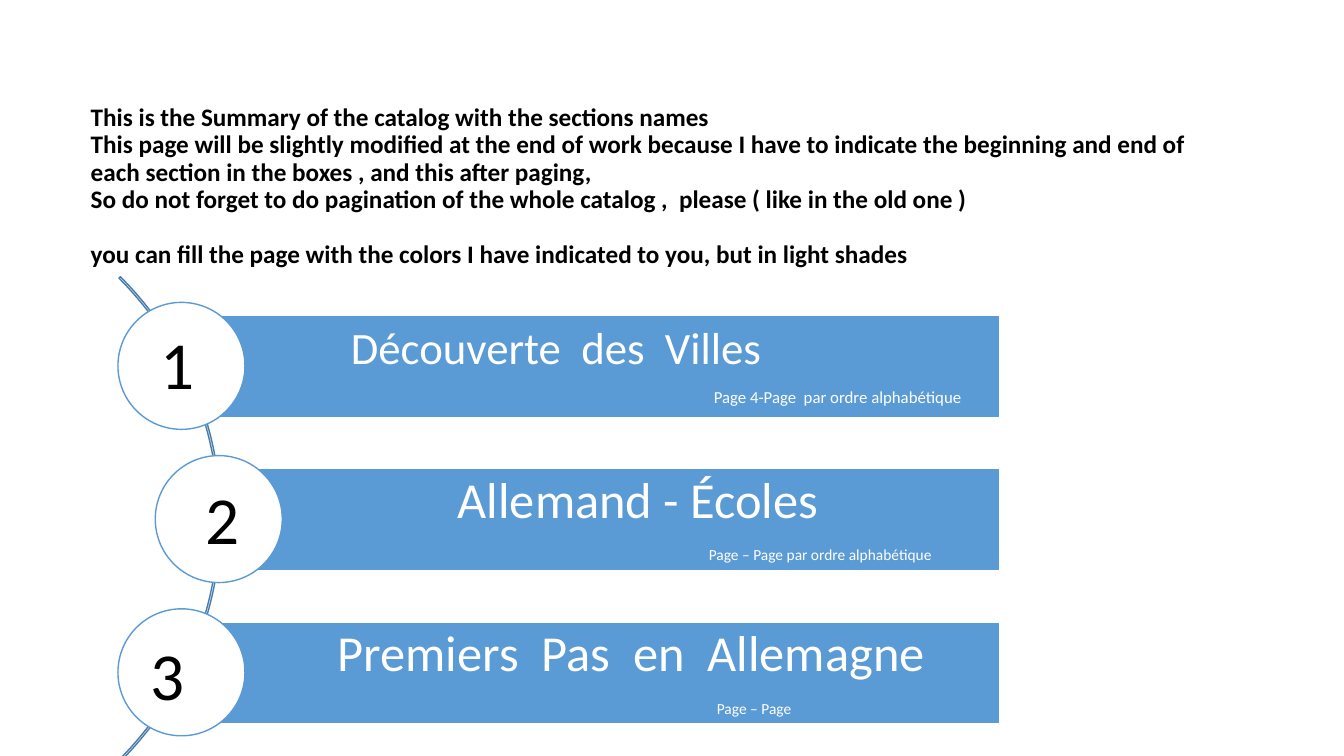
from dataclasses import dataclass

from pptx import Presentation
from pptx.dml.color import RGBColor
from pptx.enum.shapes import MSO_SHAPE
from pptx.enum.text import MSO_ANCHOR, MSO_AUTO_SIZE, PP_ALIGN
from pptx.util import Inches, Pt

ARC, RECT, OVAL = MSO_SHAPE.BLOCK_ARC, MSO_SHAPE.RECTANGLE, MSO_SHAPE.OVAL
MIDDLE, TOP = MSO_ANCHOR.MIDDLE, MSO_ANCHOR.TOP
LEFT, FIXED = PP_ALIGN.LEFT, MSO_AUTO_SIZE.NONE


@dataclass(frozen=True)
class Theme:
    """Colours and type sizes of the summary page."""
    face: str = "Calibri"
    ink: str = "000000"
    paper: str = "FFFFFF"
    blue: str = "5B9BD5"
    curve: str = "497CAB"
    head: int = 18
    digit: int = 48


class Page:
    """Draws the parts of one slide in a given theme."""

    def __init__(self, slide, theme):
        """Keep the slide and its theme."""
        self.slide, self.theme = slide, theme

    def style(self, para, size, color, bold=False):
        """Set the font and alignment of a paragraph."""
        para.alignment = LEFT
        font = para.font
        font.name, font.size, font.bold = self.theme.face, Pt(size), bold
        font.color.rgb = RGBColor.from_string(color)

    def title(self, lines, left, top, width, height):
        """Place the title and fill it with paragraphs."""
        shape = self.slide.shapes.title
        shape.left, shape.top = Inches(left), Inches(top)
        shape.width, shape.height = Inches(width), Inches(height)
        frame = shape.text_frame
        frame.word_wrap, frame.auto_size = True, FIXED
        frame.vertical_anchor = MIDDLE
        frame.text = "\n".join(lines)
        for para in frame.paragraphs:
            self.style(para, self.theme.head, self.theme.ink, True)
            para.line_spacing, para.space_before = 0.9, Pt(0)
        frame.paragraphs[-1].space_before = Pt(20)

    def shape(self, kind, left, top, width, height, line, fill=None):
        """Add a preset shape with a thin outline."""
        shape = self.slide.shapes.add_shape(
            kind, Inches(left), Inches(top), Inches(width), Inches(height))
        shape.shadow.inherit = False
        if fill:
            shape.fill.solid()
            shape.fill.fore_color.rgb = RGBColor.from_string(fill)
        else:
            shape.fill.background()
        shape.line.color.rgb = RGBColor.from_string(line)
        shape.line.width = Pt(1)
        return shape

    def arc(self, left, top, size):
        """Add the thin curve that links the circles."""
        arc = self.shape(ARC, left, top, size, size, self.theme.curve)
        for i, value in enumerate((189, 27, 0.003)):
            arc.adjustments[i] = value

    def bar(self, left, top, right, height, lines):
        """Add a blue bar whose lines start at given places."""
        theme, inset = self.theme, 0.8
        bar = self.shape(RECT, left, top, right - left, height,
                         theme.paper, theme.blue)
        frame = bar.text_frame
        frame.word_wrap, frame.vertical_anchor = True, MIDDLE
        frame.margin_left = Inches(inset)
        frame.margin_top = frame.margin_right = frame.margin_bottom = Inches(0.08)
        frame.text = "\n".join(text for text, size, start in lines)
        for para, (text, size, start) in zip(frame.paragraphs, lines):
            self.style(para, size, theme.paper)
            para.line_spacing, para.space_after = 0.9, Pt(round(size * 0.35))
            indent = Inches(start - left - inset)
            props = para._p.get_or_add_pPr()
            props.set("marL", str(indent))
            props.set("indent", "0")

    def circle(self, left, top, size):
        """Add a white circle with a blue rim."""
        self.shape(OVAL, left, top, size, size, self.theme.blue, self.theme.paper)

    def digit(self, text, left, top):
        """Add a large section number."""
        box = self.slide.shapes.add_textbox(
            Inches(left), Inches(top), Inches(0.72), Inches(0.91))
        frame = box.text_frame
        frame.word_wrap, frame.vertical_anchor = True, TOP
        frame.text = text
        self.style(frame.paragraphs[0], self.theme.digit, self.theme.ink)


HEAD = (
    "This is the Summary of the catalog with the sections names",
    "This page will be slightly modified at the end of work because I have to "
    "indicate the beginning and end of each section in the boxes , and this "
    "after paging,",
    "So do not forget to do pagination of the whole catalog ,  please "
    "( like in the old one )",
    "you can fill the page with the colors I have indicated to you, "
    "but in light shades",
)
PARTS = (
    (1.8, 1.49, (("Découverte  des  Villes", 32, 3.48),
                 ("Page 4-Page  par ordre alphabétique", 12, 7.08))),
    (2.17, 1.94, (("Allemand - Écoles", 36, 4.54),
                  ("Page – Page par ordre alphabétique", 11, 7.03))),
    (1.8, 1.39, (("Premiers  Pas  en  Allemagne", 36, 3.35),
                 ("Page – Page", 11, 7.11))),
)


def main():
    """Build the summary slide and save it."""
    deck = Presentation()
    deck.slide_width, deck.slide_height = Inches(13.33), Inches(7.5)
    page = Page(deck.slides.add_slide(deck.slide_layouts[5]), Theme())
    page.title(HEAD, 0.8, 1.13, 11.5, 1.45)
    page.arc(-4.61, 1.75, 6.8)
    for i, (left, start, lines) in enumerate(PARTS):
        drop = 1.52 * i
        page.bar(left, 3.13 + drop, 9.92, 1.01, lines)
        page.circle(left - 0.63, 3 + drop, 1.26)
        page.digit(str(i + 1), start, 3.15 + 1.54 * i)
    deck.save("out.pptx")


if __name__ == "__main__":
    main()
